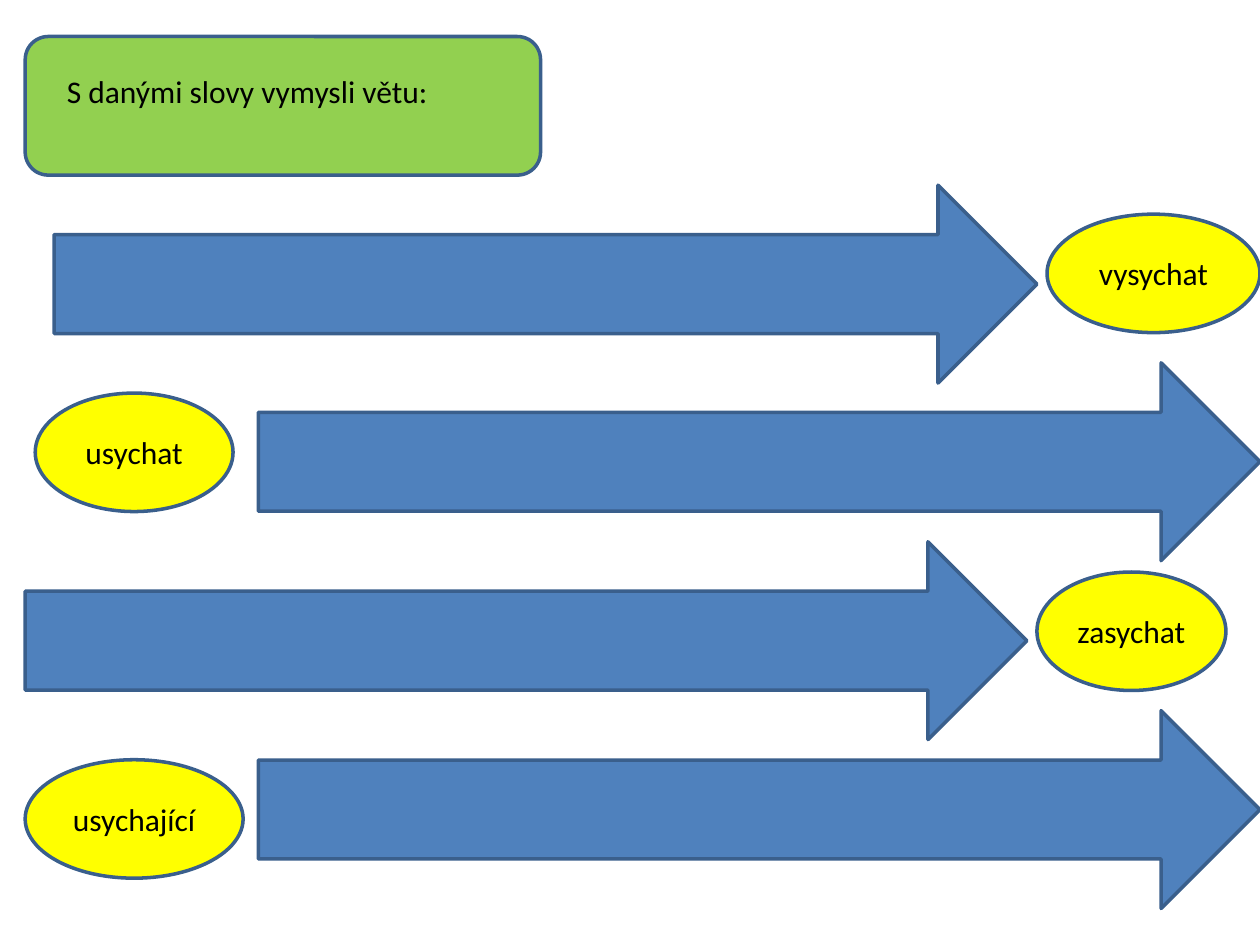
from dataclasses import dataclass

from pptx import Presentation
from pptx.dml.color import RGBColor
from pptx.enum.shapes import MSO_SHAPE
from pptx.enum.text import MSO_ANCHOR, MSO_AUTO_SIZE, PP_ALIGN
from pptx.util import Inches, Pt


@dataclass(frozen=True)
class Theme:
    green: RGBColor = RGBColor(0x92, 0xD0, 0x50)
    blue: RGBColor = RGBColor(0x4F, 0x81, 0xBD)
    yellow: RGBColor = RGBColor(0xFF, 0xFF, 0x00)
    outline: RGBColor = RGBColor(0x3A, 0x5F, 0x8C)
    text: RGBColor = RGBColor(0x00, 0x00, 0x00)
    font: str = "Calibri"
    text_size: Pt = Pt(18)
    outline_width: Pt = Pt(2)


theme = Theme()
ARROW_HEIGHT = 1.57
WORD_HEIGHT = 0.94

# word, word left, word top, word width, arrow left, arrow top, arrow width
ROWS = [
    ("vysychat", 8.31, 1.7, 1.69, 0.43, 1.47, 7.8),
    ("usychat", 0.28, 3.12, 1.57, 2.05, 2.88, 7.95),
    ("zasychat", 8.23, 4.54, 1.5, 0.2, 4.3, 7.95),
    ("usychající", 0.2, 6.03, 1.73, 2.05, 5.64, 7.95),
]

deck = Presentation()
deck.slide_width, deck.slide_height = Inches(10), Inches(7.5)
page = deck.slides.add_slide(deck.slide_layouts[5])


def add_outlined(kind, left, top, width, height, fill):
    box = page.shapes.add_shape(
        kind, Inches(left), Inches(top), Inches(width), Inches(height))
    box.shadow.inherit = False
    box.fill.solid()
    box.fill.fore_color.rgb = fill
    box.line.color.rgb = theme.outline
    box.line.width = theme.outline_width
    return box


def write(box, text, align=PP_ALIGN.LEFT, anchor=MSO_ANCHOR.TOP, wrap=True):
    frame = box.text_frame
    frame.word_wrap = wrap
    frame.auto_size = MSO_AUTO_SIZE.NONE
    frame.vertical_anchor = anchor
    para = frame.paragraphs[0]
    para.alignment = align
    span = para.add_run()
    span.text = text
    span.font.name = theme.font
    span.font.size = theme.text_size
    span.font.color.rgb = theme.text


add_outlined(MSO_SHAPE.ROUNDED_RECTANGLE, 0.2, 0.29, 4.09, 1.1, theme.green)

title = page.shapes.title
title.left, title.top = Inches(0.43), Inches(0.52)
title.width, title.height = Inches(3.7), Inches(0.4)
write(title, "S danými slovy vymysli větu:")
# The title placeholder comes first, so bring it in front of its green panel.
title.element.getparent().append(title.element)

for word, left, top, width, arrow_left, arrow_top, arrow_width in ROWS:
    add_outlined(MSO_SHAPE.RIGHT_ARROW, arrow_left, arrow_top,
                 arrow_width, ARROW_HEIGHT, theme.blue)
    oval = add_outlined(MSO_SHAPE.OVAL, left, top, width, WORD_HEIGHT, theme.yellow)
    write(oval, word, align=PP_ALIGN.CENTER, anchor=MSO_ANCHOR.MIDDLE, wrap=False)

deck.save("out.pptx")
